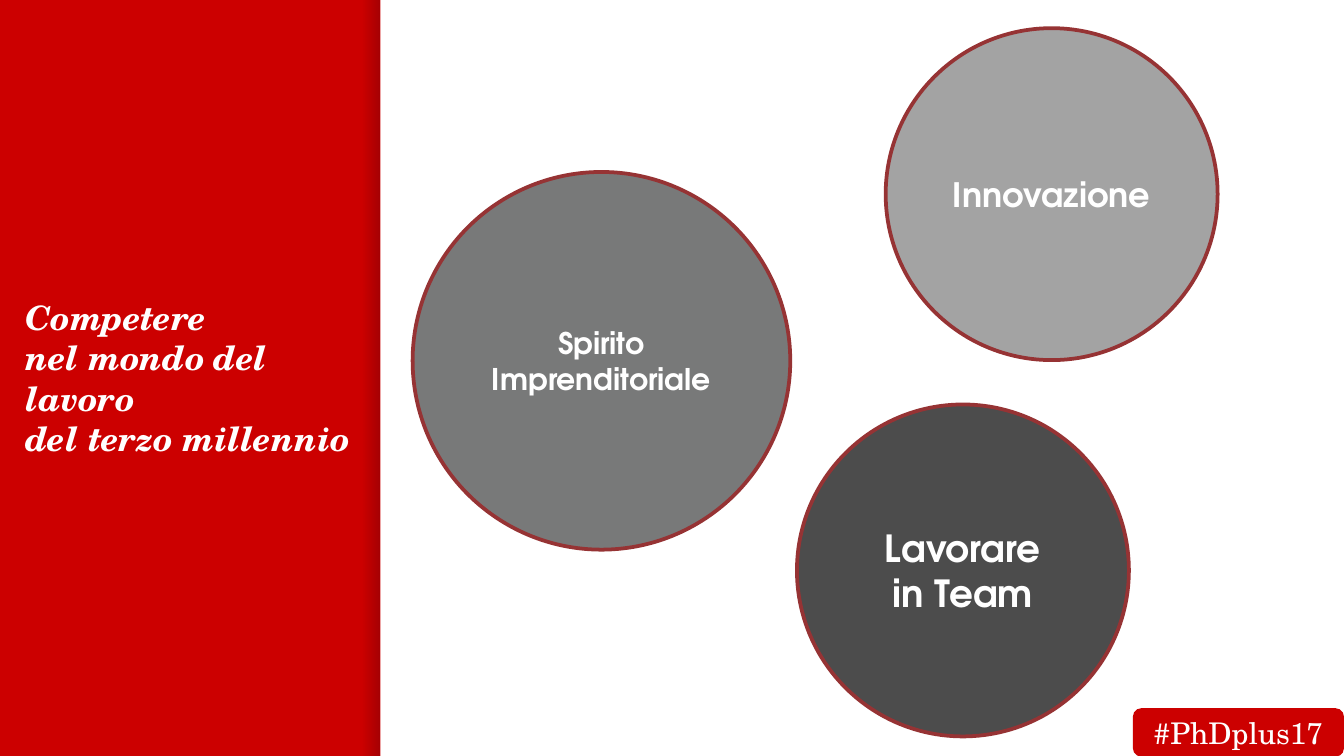
from dataclasses import dataclass

from lxml.etree import SubElement
from pptx import Presentation
from pptx.dml.color import RGBColor
from pptx.enum.shapes import MSO_SHAPE
from pptx.enum.text import MSO_ANCHOR, MSO_AUTO_SIZE, PP_ALIGN
from pptx.oxml.ns import qn
from pptx.shapes.autoshape import Shape
from pptx.slide import Slide
from pptx.text.text import TextFrame
from pptx.util import Inches, Pt

COLORS = {
    "red": "CC0000",
    "outline": "963334",
    "white": "FFFFFF",
    "shadow": "000014",
    "mid_gray": "787979",
    "dark_gray": "4C4C4C",
    "light_gray": "A3A3A3",
}
SANS = "TeX Gyre Adventor"
SERIF = "TeX Gyre Schola"
TITLE = "Competere \vnel mondo del lavoro \vdel terzo millennio"
WIDTH = 10
HEIGHT = WIDTH * 9 / 16
PANEL_WIDTH = 2.83


@dataclass
class Circle:
    left: float
    top: float
    diameter: float
    color: str
    text: str
    size: int


CIRCLES = [
    Circle(3.07, 1.28, 2.81, "mid_gray", "Spirito\nImprenditoriale", 16),
    Circle(5.93, 3.01, 2.47, "dark_gray", "Lavorare\nin Team", 20),
    Circle(6.59, 0.21, 2.47, "light_gray", "Innovazione", 18),
]


def rgb(name: str) -> RGBColor:
    return RGBColor.from_string(COLORS[name])


def add_filled_shape(slide: Slide, kind: MSO_SHAPE, left: float, top: float,
                     width: float, height: float, color: str) -> Shape:
    shape = slide.shapes.add_shape(
        kind, Inches(left), Inches(top), Inches(width), Inches(height))
    shape.shadow.inherit = False
    shape.fill.solid()
    shape.fill.fore_color.rgb = rgb(color)
    shape.line.fill.background()
    return shape


def write_text(frame: TextFrame, text: str, font: str, size: int,
               bold: bool = False, italic: bool = False,
               align: PP_ALIGN = PP_ALIGN.CENTER,
               anchor: MSO_ANCHOR = MSO_ANCHOR.MIDDLE) -> None:
    frame.text = text
    frame.word_wrap = True
    frame.auto_size = MSO_AUTO_SIZE.NONE
    frame.vertical_anchor = anchor
    frame.margin_left = frame.margin_right = Inches(0.1)
    frame.margin_top = frame.margin_bottom = Inches(0.1)
    for paragraph in frame.paragraphs:
        paragraph.alignment = align
        paragraph.font.name = font
        paragraph.font.size = Pt(size)
        paragraph.font.bold = bold
        paragraph.font.italic = italic
        paragraph.font.color.rgb = rgb("white")


def add_edge_shade(slide: Slide) -> None:
    """Darken the red panel towards its right edge."""
    shade = add_filled_shape(slide, MSO_SHAPE.RECTANGLE, 2.7, 0, 0.12, HEIGHT, "shadow")
    shade.fill.gradient()
    shade.fill.gradient_angle = 0
    for stop in shade.fill.gradient_stops:
        stop.color.rgb = rgb("shadow")
    stop_colors = list(shade.element.spPr.iter(qn("a:srgbClr")))
    for color, opacity in zip(stop_colors, (0, 20)):
        SubElement(color, qn("a:alpha"), val=str(opacity * 1000))


def add_title(slide: Slide) -> None:
    title = slide.shapes.title
    title.left, title.top = Inches(0.09), Inches(2.11)
    title.width, title.height = Inches(2.7), Inches(1.15)
    write_text(title.text_frame, TITLE, SERIF, 18, bold=True, italic=True,
               align=PP_ALIGN.LEFT, anchor=MSO_ANCHOR.TOP)


def add_circle(slide: Slide, circle: Circle) -> None:
    shape = add_filled_shape(slide, MSO_SHAPE.OVAL, circle.left, circle.top,
                             circle.diameter, circle.diameter, circle.color)
    shape.line.color.rgb = rgb("outline")
    shape.line.width = Pt(2)
    write_text(shape.text_frame, circle.text, SANS, circle.size, bold=True)


def add_hashtag(slide: Slide) -> None:
    badge = add_filled_shape(slide, MSO_SHAPE.ROUNDED_RECTANGLE,
                             8.43, 5.27, 1.57, 0.36, "red")
    badge.adjustments[0] = 0.17
    write_text(badge.text_frame, "#PhDplus17", SERIF, 16)


def main() -> None:
    presentation = Presentation()
    presentation.slide_width = Inches(WIDTH)
    presentation.slide_height = Inches(HEIGHT)
    slide = presentation.slides.add_slide(presentation.slide_layouts[5])
    slide.background.fill.solid()
    slide.background.fill.fore_color.rgb = rgb("red")

    add_title(slide)
    add_edge_shade(slide)
    add_filled_shape(slide, MSO_SHAPE.RECTANGLE, PANEL_WIDTH, 0,
                     WIDTH - PANEL_WIDTH, HEIGHT, "white")
    for circle in CIRCLES:
        add_circle(slide, circle)
    add_hashtag(slide)
    presentation.save("out.pptx")


if __name__ == "__main__":
    main()
